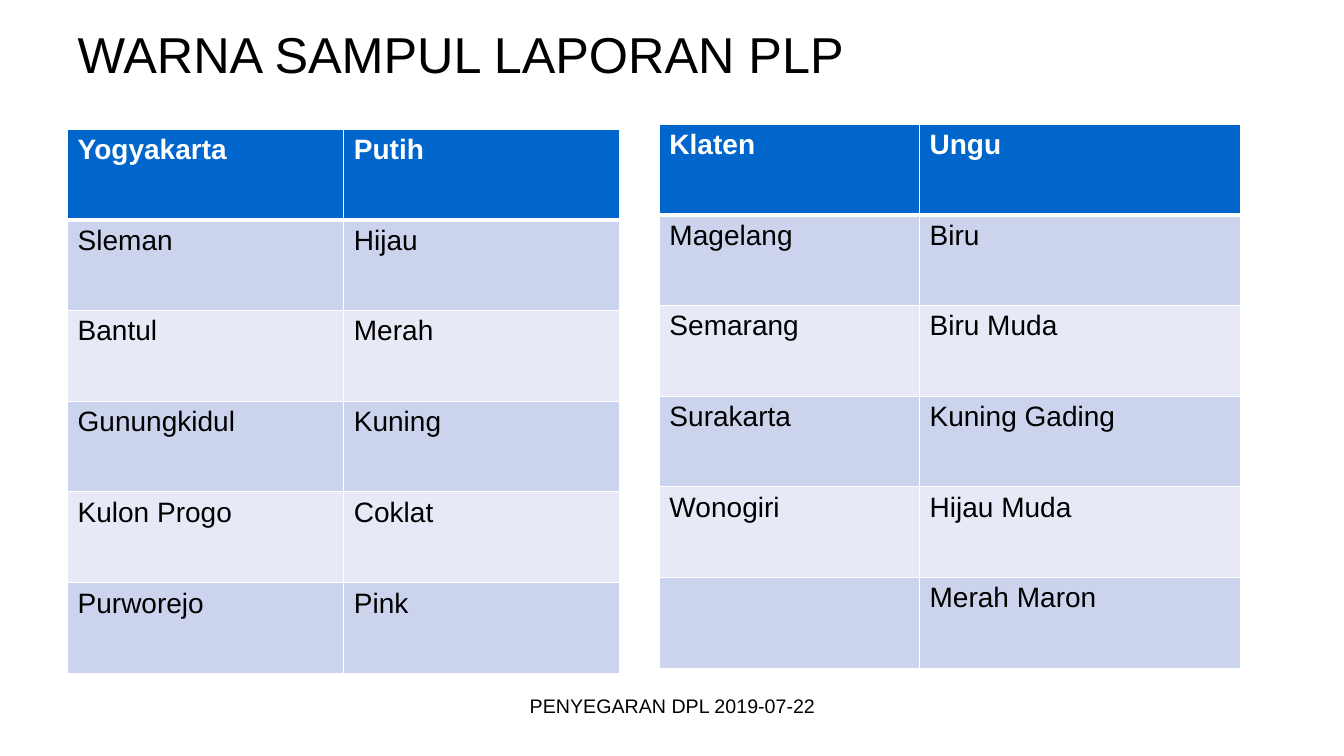
from lxml.etree import SubElement
from pptx import Presentation
from pptx.dml.color import RGBColor
from pptx.enum.text import MSO_ANCHOR, PP_ALIGN
from pptx.oxml.ns import qn
from pptx.util import Inches, Pt

BLACK = RGBColor(0x00, 0x00, 0x00)
WHITE = RGBColor(0xFF, 0xFF, 0xFF)
HEADER_BLUE = RGBColor(0x00, 0x66, 0xCC)
BAND_DARK = RGBColor(0xCC, 0xD3, 0xEC)
BAND_LIGHT = RGBColor(0xE7, 0xEA, 0xF6)

TITLE_FONT = {"name": "Arial", "size": Pt(36), "bold": False}
HEADER_FONT = {"name": "Arial", "size": Pt(20), "bold": True}
REGION_FONT = {"name": "Arial", "size": Pt(20), "bold": False}
FOOTER_FONT = {"name": "Arial", "size": Pt(14), "bold": False}
ROW_HEIGHT = 0.9


def format_font(paragraph, values, color):
    for attribute, value in values.items():
        setattr(paragraph.font, attribute, value)
    paragraph.font.color.rgb = color


def add_borders(cell, widths):
    properties = cell._tc.get_or_add_tcPr()
    for side, points in widths.items():
        line = SubElement(properties, qn(f"a:ln{side}"), w=str(Pt(points)))
        fill = SubElement(line, qn("a:solidFill"))
        SubElement(fill, qn("a:srgbClr"), val=str(WHITE))


presentation = Presentation()
presentation.slide_width = Inches(13.33)
presentation.slide_height = Inches(7.5)
slide = presentation.slides.add_slide(presentation.slide_layouts[5])

title = slide.shapes.title
title_place = {"left": 0.67, "top": 0.21, "width": 12, "height": 0.64}
for attribute, length in title_place.items():
    setattr(title, attribute, Inches(length))
title.text_frame.text = "WARNA SAMPUL LAPORAN PLP"
title.text_frame.vertical_anchor = MSO_ANCHOR.MIDDLE
title.text_frame.paragraphs[0].alignment = PP_ALIGN.LEFT
format_font(title.text_frame.paragraphs[0], TITLE_FONT, BLACK)

cover_colors = [
    (0.67, 1.28, (2.74, 2.74), [
        ("Yogyakarta", "Putih"),
        ("Sleman", "Hijau"),
        ("Bantul", "Merah"),
        ("Gunungkidul", "Kuning"),
        ("Kulon Progo", "Coklat"),
        ("Purworejo", "Pink"),
    ]),
    (6.54, 1.23, (2.58, 3.18), [
        ("Klaten", "Ungu"),
        ("Magelang", "Biru"),
        ("Semarang", "Biru Muda"),
        ("Surakarta", "Kuning Gading"),
        ("Wonogiri", "Hijau Muda"),
        ("", "Merah Maron"),
    ]),
]

for left, top, column_widths, regions in cover_colors:
    region_table = slide.shapes.add_table(
        len(regions), len(column_widths), Inches(left), Inches(top),
        Inches(sum(column_widths)), Inches(ROW_HEIGHT * len(regions))).table
    for column, width in zip(region_table.columns, column_widths):
        column.width = Inches(width)
    for row_index, region in enumerate(regions):
        is_header = row_index == 0
        band = BAND_DARK if row_index % 2 else BAND_LIGHT
        for column_index, wording in enumerate(region):
            cell = region_table.cell(row_index, column_index)
            add_borders(cell, {"L": 1, "R": 1, "T": 3 if row_index == 1 else 1,
                               "B": 3 if is_header else 1})
            cell.fill.solid()
            cell.fill.fore_color.rgb = HEADER_BLUE if is_header else band
            cell.text = wording
            format_font(cell.text_frame.paragraphs[0],
                        HEADER_FONT if is_header else REGION_FONT,
                        WHITE if is_header else BLACK)

footer = slide.shapes.add_textbox(
    Inches(4.56), Inches(6.83), Inches(4.22), Inches(0.52)).text_frame
footer.word_wrap = True
footer.text = "PENYEGARAN DPL 2019-07-22"
footer.paragraphs[0].alignment = PP_ALIGN.CENTER
format_font(footer.paragraphs[0], FOOTER_FONT, BLACK)

presentation.save("out.pptx")
